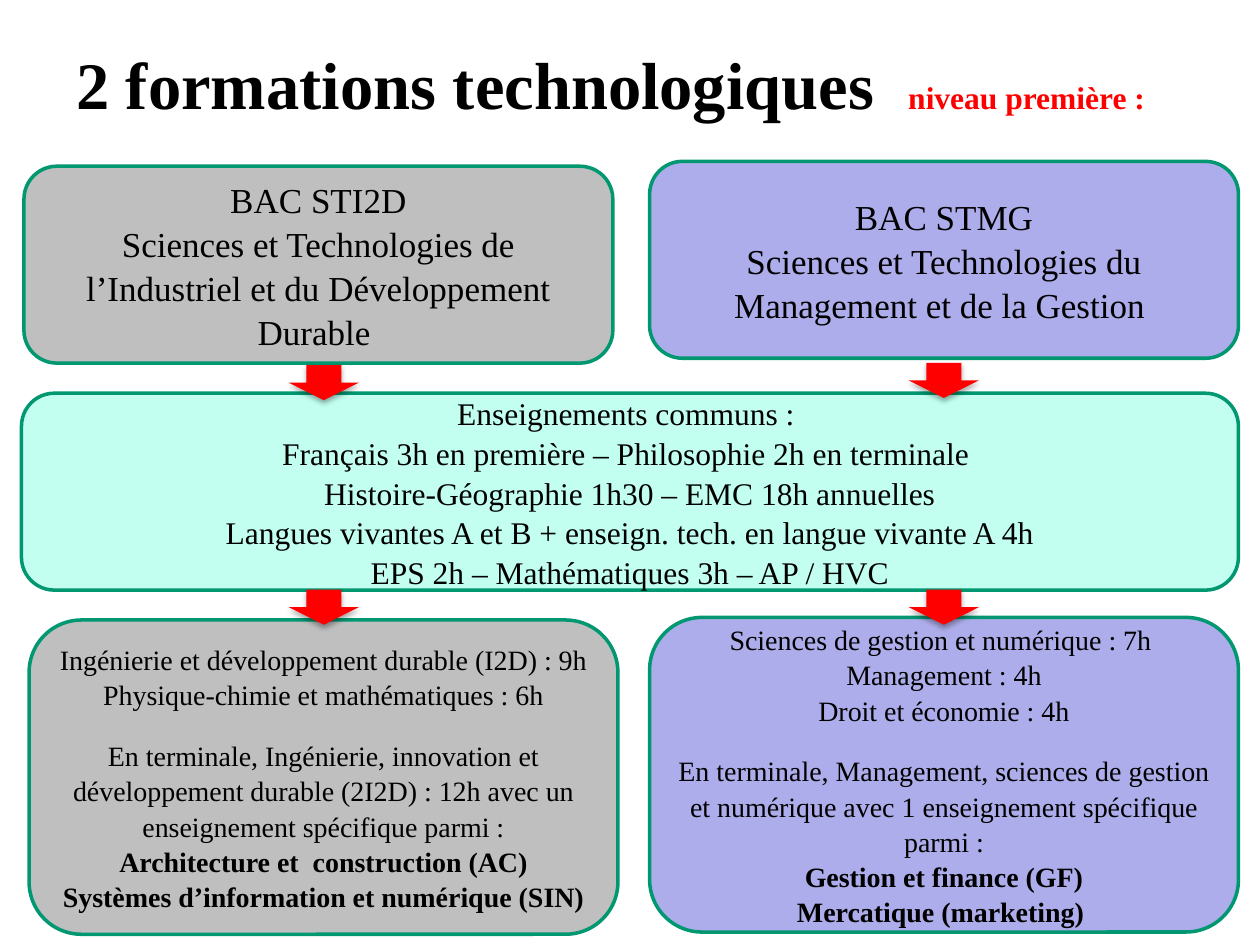
from dataclasses import dataclass

from lxml import etree
from pptx import Presentation
from pptx.dml.color import RGBColor
from pptx.enum import shapes, text
from pptx.oxml import ns
from pptx.util import Pt


@dataclass(frozen=True)
class Theme:
    font: str = "Times New Roman"
    black: str = "000000"
    red: str = "FF0000"
    border: str = "009771"
    industry: str = "BFBFBF"
    business: str = "ADADEB"
    common: str = "C2FFF0"
    title: int = 38
    track: int = 20
    shared: int = 18
    detail: int = 16


THEME = Theme()
GAP = 14.5  # space between the première and terminale parts


def rgb(value):
    return RGBColor.from_string(value)


def add_run(paragraph, words, size, color=THEME.black, bold=False):
    run = paragraph.add_run()
    run.text = words
    run.font.name = THEME.font
    run.font.size = Pt(size)
    run.font.bold = bold
    run.font.color.rgb = rgb(color)


def add_title(slide, runs):
    title = slide.shapes.title
    title.left, title.top, title.width, title.height = Pt(26), Pt(15), Pt(654.5), Pt(59)
    frame = title.text_frame
    frame.auto_size = text.MSO_AUTO_SIZE.NONE
    frame.vertical_anchor = text.MSO_ANCHOR.MIDDLE
    frame.margin_left, frame.margin_right = Pt(17.5), 0
    frame.margin_top = Pt(9)
    paragraph = frame.paragraphs[0]
    paragraph.alignment = text.PP_ALIGN.LEFT
    for words, size, color in runs:
        add_run(paragraph, words, size, color, bold=True)


def add_box(slide, place, fill, size, lines, bold_lines=(), gap_before=None):
    """Rounded box of centred lines; gap_before is the index of the spaced line."""
    box = slide.shapes.add_shape(
        shapes.MSO_SHAPE.ROUNDED_RECTANGLE, *(Pt(length) for length in place))
    box.shadow.inherit = False
    box.fill.solid()
    box.fill.fore_color.rgb = rgb(fill)
    box.line.color.rgb = rgb(THEME.border)
    box.line.width = Pt(2)
    frame = box.text_frame
    frame.word_wrap = True
    frame.vertical_anchor = text.MSO_ANCHOR.MIDDLE
    all_lines = [(line, False) for line in lines] + [(line, True) for line in bold_lines]
    for index, (line, bold) in enumerate(all_lines):
        paragraph = frame.add_paragraph() if index else frame.paragraphs[0]
        paragraph.alignment = text.PP_ALIGN.CENTER
        paragraph.line_spacing = 1.05
        if index and index == gap_before:
            paragraph.space_before = Pt(GAP)
        add_run(paragraph, line, size, bold=bold)


def add_arrow(slide, center_x, center_y, length=20, breadth=40):
    arrow = slide.shapes.add_shape(
        shapes.MSO_SHAPE.RIGHT_ARROW, Pt(center_x - length / 2),
        Pt(center_y - breadth / 2), Pt(length), Pt(breadth))
    arrow.rotation = 90
    arrow.fill.solid()
    arrow.fill.fore_color.rgb = rgb(THEME.red)
    arrow.line.fill.background()
    # Soft shadow below the arrow
    arrow.shadow.inherit = False
    effects = arrow.element.spPr.find(ns.qn("a:effectLst"))
    shadow = etree.SubElement(
        effects, ns.qn("a:outerShdw"), blurRad=str(Pt(3.1)), dist=str(Pt(1.8)),
        dir="5400000", rotWithShape="0")
    color = etree.SubElement(shadow, ns.qn("a:srgbClr"), val=THEME.black)
    etree.SubElement(color, ns.qn("a:alpha"), val="35000")


def main():
    deck = Presentation()
    deck.slide_width, deck.slide_height = Pt(720), Pt(540)
    slide = deck.slides.add_slide(deck.slide_layouts[5])

    add_title(slide, [
        ("2 formations technologiques  ", THEME.title, THEME.black),
        ("niveau première :  ", THEME.shared, THEME.red)])

    # The two tracks
    add_box(slide, (13.7, 95, 336.5, 112.5), THEME.industry, THEME.track, [
        "BAC STI2D",
        "Sciences et Technologies de l’Industriel et du Développement Durable "])
    add_box(slide, (371.2, 92.2, 336.5, 112.5), THEME.business, THEME.track, [
        "BAC STMG",
        "Sciences et Technologies du Management et de la Gestion "])

    # Shared teaching
    add_box(slide, (12.3, 224.7, 695.4, 112.5), THEME.common, THEME.shared, [
        "Enseignements communs : ",
        "Français 3h en première – Philosophie 2h en terminale ",
        "Histoire-Géographie 1h30 – EMC 18h annuelles",
        "Langues vivantes A et B + enseign. tech. en langue vivante A 4h",
        "EPS 2h – Mathématiques 3h – AP / HVC"])

    # Teaching specific to each track
    add_box(slide, (16.6, 354.3, 336.5, 179.6), THEME.industry, THEME.detail, [
        "Ingénierie et développement durable (I2D) : 9h ",
        "Physique-chimie et mathématiques : 6h",
        "En terminale, Ingénierie, innovation et développement durable (2I2D) : "
        "12h avec un enseignement spécifique parmi :"],
        ["Architecture et  construction (AC)",
         "Systèmes d’information et numérique (SIN)"], gap_before=2)
    add_box(slide, (371.2, 352.8, 336.5, 179.8), THEME.business, THEME.detail, [
        "Sciences de gestion et numérique : 7h ",
        "Management : 4h",
        "Droit et économie : 4h",
        "En terminale, Management, sciences de gestion et numérique "
        "avec 1 enseignement spécifique parmi :"],
        ["Gestion et finance (GF)", "Mercatique (marketing) "], gap_before=3)

    # Arrows into and out of the shared teaching
    for center_x, upper_y in ((185, 218.7), (539.3, 217.4)):
        for center_y in (upper_y, 347):
            add_arrow(slide, center_x, center_y)

    deck.save("out.pptx")


if __name__ == "__main__":
    main()
